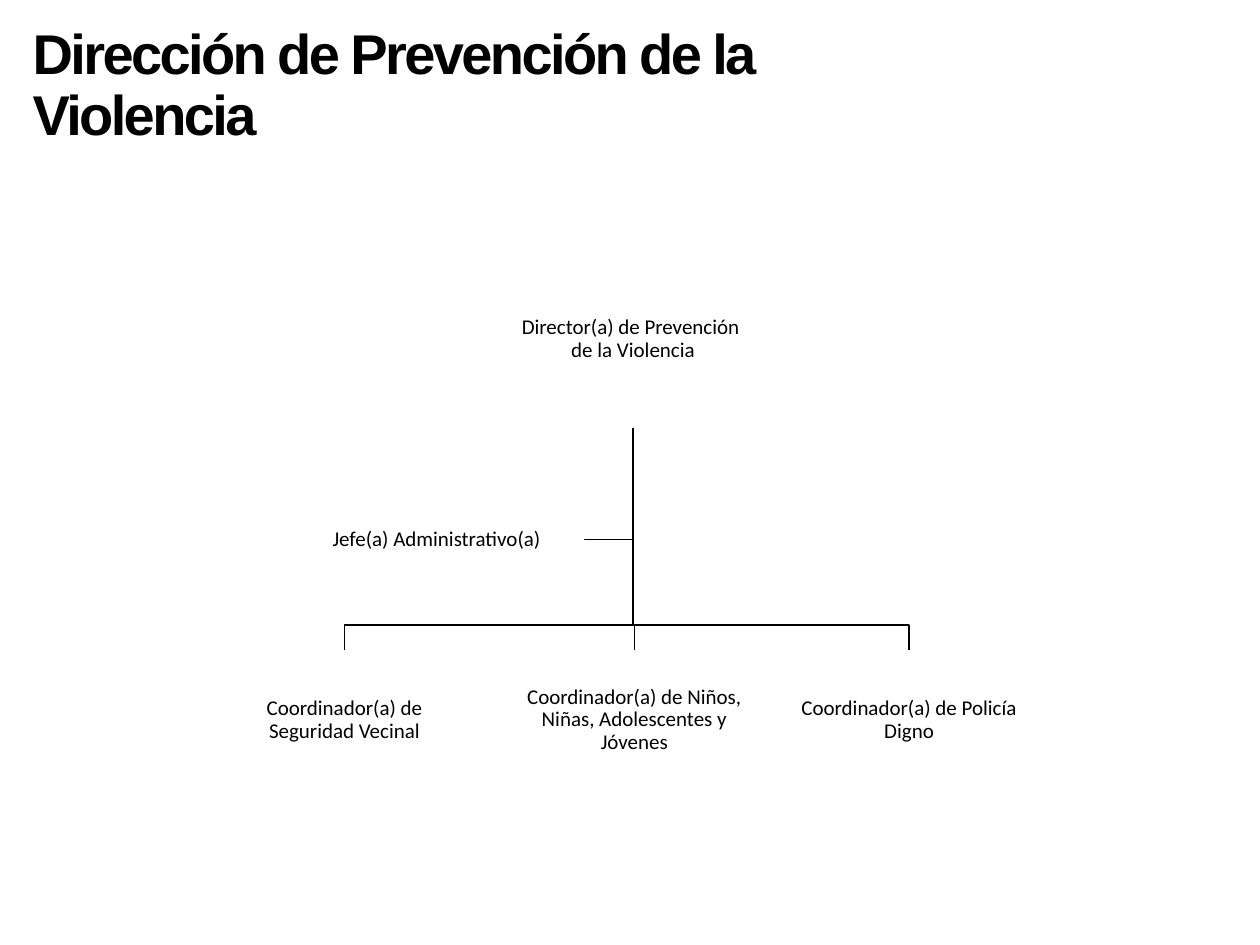
from dataclasses import dataclass

from pptx import Presentation
from pptx.dml.color import RGBColor
from pptx.enum.text import MSO_ANCHOR, PP_ALIGN
from pptx.util import Pt


@dataclass(frozen=True)
class Theme:
    ink: RGBColor = RGBColor(0x00, 0x00, 0x00)
    paper: RGBColor = RGBColor(0xFF, 0xFF, 0xFF)
    title_font: str = "Arial"
    title_size: float = 32
    title_tracking: float = -1.5
    post_font: str = "Calibri"
    post_size: float = 12
    line_spacing: float = 0.9
    line_width: float = 1
    inset: float = 0.7


@dataclass(frozen=True)
class Post:
    """One position in the organisation chart, in points."""
    text: str
    left: float
    top: float
    width: float
    height: float

    @property
    def centre(self) -> float:
        return self.left + self.width / 2

    @property
    def middle(self) -> float:
        return self.top + self.height / 2

    @property
    def right(self) -> float:
        return self.left + self.width

    @property
    def bottom(self) -> float:
        return self.top + self.height


THEME = Theme()

director = Post("Director(a) de Prevención \vde la Violencia", 260.6, 143.2, 202.4, 101.2)
administrator = Post("Jefe(a) Administrativo(a)", 165.2, 273.6, 168.6, 69.4)
coordinators = [
    Post(text, left, 371.5, 141.8, 79.9)
    for text, left in (
        ("Coordinador(a) de Seguridad Vecinal", 126),
        ("Coordinador(a) de Niños, Niñas, Adolescentes y Jóvenes", 291.6),
        ("Coordinador(a) de Policía Digno", 448.6),
    )
]
BRANCH_GAP = 14.4  # from the horizontal branch down to the coordinators


def draw_link(slide, points: list[tuple[float, float]]) -> None:
    start, *bends = [(Pt(x), Pt(y)) for x, y in points]
    builder = slide.shapes.build_freeform(*start)
    builder.add_line_segments(bends, close=False)
    link = builder.convert_to_shape()
    link.shadow.inherit = False
    link.fill.background()
    link.line.color.rgb = THEME.ink
    link.line.width = Pt(THEME.line_width)


def draw_post(slide, post: Post, filled: bool = True) -> None:
    box = slide.shapes.add_shape(
        1, Pt(post.left), Pt(post.top), Pt(post.width), Pt(post.height))
    box.shadow.inherit = False
    box.line.fill.background()
    if filled:
        box.fill.solid()
        box.fill.fore_color.rgb = THEME.paper
    else:
        box.fill.background()
    frame = box.text_frame
    frame.word_wrap = True
    frame.vertical_anchor = MSO_ANCHOR.MIDDLE
    frame.margin_left = frame.margin_right = Pt(THEME.inset)
    frame.margin_top = frame.margin_bottom = Pt(THEME.inset)
    frame.text = post.text
    paragraph = frame.paragraphs[0]
    paragraph.alignment = PP_ALIGN.CENTER
    paragraph.line_spacing = THEME.line_spacing
    paragraph.font.name = THEME.post_font
    paragraph.font.size = Pt(THEME.post_size)
    paragraph.font.color.rgb = THEME.ink


def draw_title(slide, text: str) -> None:
    title = slide.shapes.add_textbox(Pt(11.5), Pt(11.5), Pt(533.5), Pt(77))
    title.text_frame.word_wrap = True
    paragraph = title.text_frame.paragraphs[0]
    paragraph.line_spacing = THEME.line_spacing
    run = paragraph.add_run()
    run.text = text
    paragraph.font.name = THEME.title_font
    paragraph.font.size = Pt(THEME.title_size)
    paragraph.font.bold = True
    paragraph.font.color.rgb = THEME.ink
    # Letter spacing is in hundredths of a point
    run._r.get_or_add_rPr().set("spc", str(int(THEME.title_tracking * 100)))


def main() -> None:
    presentation = Presentation()
    presentation.slide_width, presentation.slide_height = Pt(720), Pt(540)
    slide = presentation.slides.add_slide(presentation.slide_layouts[6])

    # Links, all starting under the director
    trunk = director.centre
    origin = (trunk, director.bottom)
    draw_link(slide, [origin, (trunk, administrator.middle),
                      (administrator.right, administrator.middle)])
    for coordinator in coordinators:
        branch = coordinator.top - BRANCH_GAP
        draw_link(slide, [origin, (trunk, branch), (coordinator.centre, branch),
                          (coordinator.centre, coordinator.top)])

    # Posts
    draw_post(slide, director, filled=False)
    for post in (*coordinators, administrator):
        draw_post(slide, post)

    # Title
    draw_title(slide, "Dirección de Prevención de la Violencia")

    presentation.save("out.pptx")


if __name__ == "__main__":
    main()
